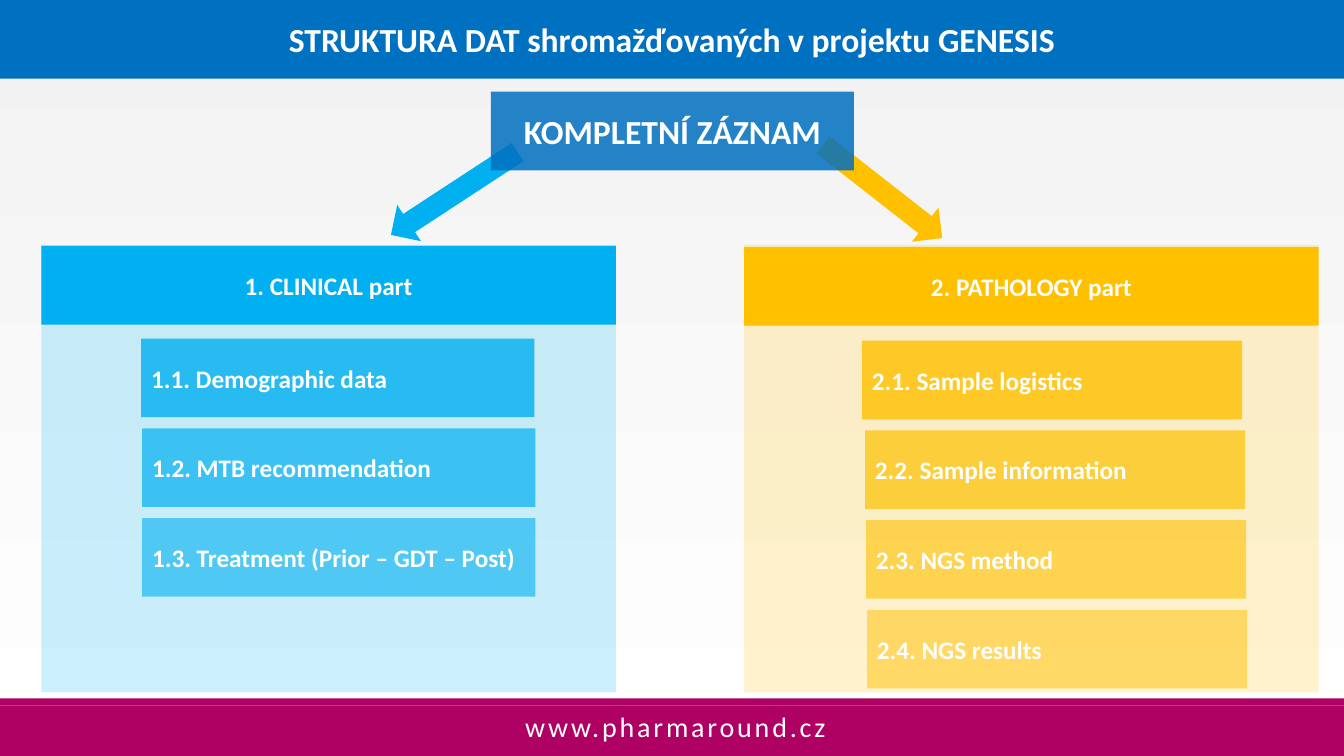
"""Builds the slide on the structure of data collected in the GENESIS project."""
from dataclasses import dataclass

import pptx
import pptx.dml.color
import pptx.enum.shapes
import pptx.enum.text
import pptx.oxml
import pptx.oxml.ns
import pptx.util

Inches = pptx.util.Inches
SHAPE = pptx.enum.shapes.MSO_SHAPE
ALIGN = pptx.enum.text.PP_ALIGN
ANCHOR = pptx.enum.text.MSO_ANCHOR

TITLE = "STRUKTURA DAT shromažďovaných v projektu GENESIS"
RECORD = "KOMPLETNÍ ZÁZNAM"
URL = "www.pharmaround.cz"
PARTS = [
    {
        "name": "1. CLINICAL part", "color": "00B0F0", "left": 0.41, "top": 2.44,
        "arrow": (4.29, 1.17, 56.8), "card_top": 3.36, "card_width": 3.9,
        "cards": [
            ("1.1. Demographic data", 1.4),
            ("1.2. MTB recommendation", 1.41),
            ("1.3. Treatment (Prior – GDT – Post)", 1.41),
        ],
    },
    {
        "name": "2. PATHOLOGY part", "color": "FFC000", "left": 7.38, "top": 2.45,
        "arrow": (8.54, 1.15, 308), "card_top": 3.38, "card_width": 3.77,
        "cards": [
            ("2.1. Sample logistics", 8.55),
            ("2.2. Sample information", 8.58),
            ("2.3. NGS method", 8.59),
            ("2.4. NGS results", 8.6),
        ],
    },
]

WIDTH, HEIGHT = 13.33, 7.5
BAR_HEIGHT = 0.78
PANEL_TOP, PANEL_WIDTH, PANEL_HEIGHT = 2.43, 5.7, 4.44
CARD_PITCH = 0.89


@dataclass(frozen=True)
class Theme:
    """Colours, font and type sizes of the slide."""
    font: str = "Calibri"
    text: str = "FFFFFF"
    blue: str = "0070C0"
    footer: str = "AF0063"
    back_top: str = "F2F2F2"
    back_bottom: str = "FFFFFF"
    heading: int = 24
    url: int = 20
    body: int = 18


THEME = Theme()


def rgb(value):
    """Return the colour for a hex string."""
    return pptx.dml.color.RGBColor.from_string(value)


def paint(sp, color, opacity=100):
    """Fill a shape with a colour at an opacity in percent, without outline."""
    sp.fill.solid()
    sp.fill.fore_color.rgb = rgb(color)
    sp.line.fill.background()
    if opacity < 100:
        clr = sp.fill._xPr.find(".//" + pptx.oxml.ns.qn("a:srgbClr"))
        alpha = pptx.oxml.parse_xml(f'<a:alpha {pptx.oxml.ns.nsdecls("a")} val="{opacity * 1000}"/>')
        clr.append(alpha)


def write(sp, text, size, align=ALIGN.CENTER, bold=True, anchor=ANCHOR.MIDDLE):
    """Write one formatted paragraph and return it."""
    tf = sp.text_frame
    tf.word_wrap = True
    tf.auto_size = pptx.enum.text.MSO_AUTO_SIZE.NONE
    tf.vertical_anchor = anchor
    p = tf.paragraphs[0]
    p.text = text
    p.alignment = align
    p.font.name = THEME.font
    p.font.size = pptx.util.Pt(size)
    p.font.bold = bold
    p.font.color.rgb = rgb(THEME.text)
    return p


def add_block(s, box, color, opacity=100, kind=SHAPE.RECTANGLE):
    """Add a flat filled shape."""
    sp = s.shapes.add_shape(kind, *map(Inches, box))
    sp.shadow.inherit = False
    paint(sp, color, opacity)
    return sp


def add_part(s, part):
    """Add the panel, arrow, header and cards of one part."""
    color, left = part["color"], part["left"]
    add_block(s, (left, PANEL_TOP, PANEL_WIDTH, PANEL_HEIGHT), color, 20)
    arrow_left, arrow_top, angle = part["arrow"]
    arrow = add_block(s, (arrow_left, arrow_top, 0.43, 1.5), color, kind=SHAPE.DOWN_ARROW)
    arrow.rotation = angle
    header = add_block(s, (left, part["top"], PANEL_WIDTH, BAR_HEIGHT), color)
    write(header, part["name"], THEME.body)
    for i, (text, card_left) in enumerate(part["cards"]):
        top = part["card_top"] + i * CARD_PITCH
        card = add_block(s, (card_left, top, part["card_width"], BAR_HEIGHT), color, 80 - 10 * i)
        write(card, text, THEME.body, ALIGN.LEFT)


def main():
    """Build and save the slide."""
    prs = pptx.Presentation()
    prs.slide_width, prs.slide_height = Inches(WIDTH), Inches(HEIGHT)
    s = prs.slides.add_slide(prs.slide_layouts[5])
    back = s.background.fill
    back.gradient()
    back.gradient_angle = 270
    for stop, color in zip(back.gradient_stops, (THEME.back_top, THEME.back_bottom)):
        stop.color.rgb = rgb(color)

    title = s.shapes.title
    title.left, title.top = Inches(0), Inches(0)
    title.width, title.height = Inches(WIDTH), Inches(BAR_HEIGHT)
    paint(title, THEME.blue)
    write(title, TITLE, THEME.heading)

    for top, height in ((7, 0.5), (6.93, 0.07)):
        add_block(s, (0, top, WIDTH, height), THEME.footer)
    for part in PARTS:
        add_part(s, part)

    url = s.shapes.add_textbox(*map(Inches, (1.2, 7.03, 11, 0.34)))
    p = write(url, URL, THEME.url, bold=False, anchor=ANCHOR.TOP)
    p.line_spacing = 0.9
    p.runs[0]._r.get_or_add_rPr().set("spc", "200")

    record = add_block(s, (4.87, 0.91, 3.6, BAR_HEIGHT), THEME.blue, 85)
    write(record, RECORD, THEME.heading)
    prs.save("out.pptx")


if __name__ == "__main__":
    main()
